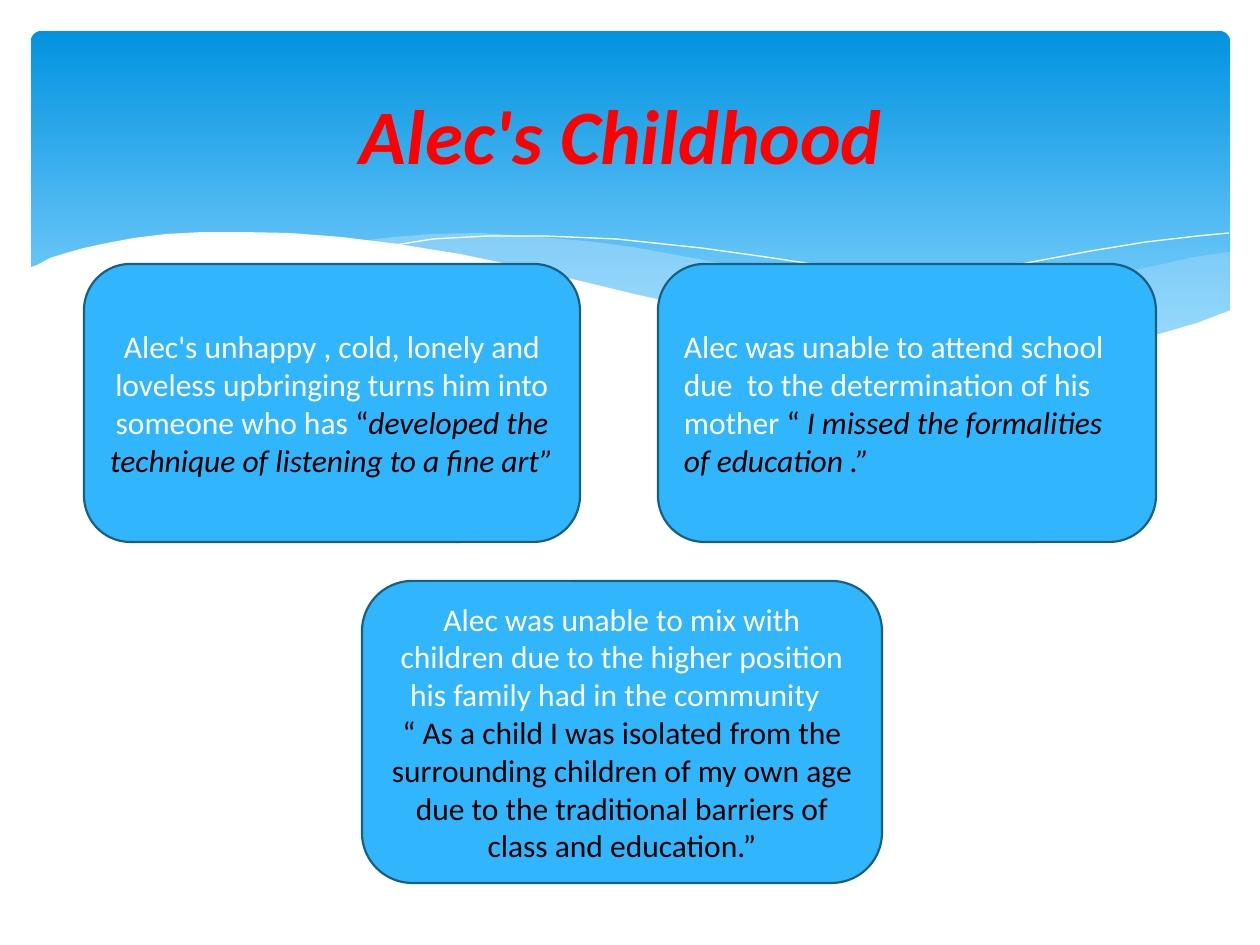
"""Build the slide on Alec's childhood: a wave banner, a title and three cards."""
from lxml.etree import SubElement
from pptx import Presentation
from pptx.dml.color import RGBColor
from pptx.enum.shapes import MSO_SHAPE
from pptx.enum.text import MSO_ANCHOR, PP_ALIGN
from pptx.oxml.ns import qn
from pptx.util import Pt

SCALE = 914400 / 126
WHITE, BLACK, RED = "FFFFFF", "000000", "FF0000"
PALE, CARD, EDGE = "C6E7FC", "31B6FD", "195F84"


def color(hex_text):
    """Turn a hex string into a colour."""
    return RGBColor.from_string(hex_text)


def write(box, align, paragraphs):
    """Fill a box with paragraphs of (text, format) spans."""
    frame = box.text_frame
    frame.word_wrap = True
    frame.vertical_anchor = MSO_ANCHOR.MIDDLE
    for index, spans in enumerate(paragraphs):
        para = frame.add_paragraph() if index else frame.paragraphs[0]
        para.alignment = align
        for text, values in spans:
            span = para.add_run()
            span.text = text
            values = {"name": "Calibri", "size": Pt(18), **values}
            span.font.color.rgb = color(values.pop("color"))
            for key, value in values.items():
                setattr(span.font, key, value)


deck = Presentation()
deck.slide_width, deck.slide_height = round(1260 * SCALE), round(945 * SCALE)
page = deck.slides.add_slide(deck.slide_layouts[6])

banner_place = [round(n * SCALE) for n in (31, 31, 1199, 340)]
banner = page.shapes.add_shape(MSO_SHAPE.ROUNDED_RECTANGLE, *banner_place)
banner.adjustments[0] = 0.03
banner.shadow.inherit = False
banner.line.fill.background()
banner.fill.gradient()
banner.fill.gradient_angle = 270
for stop, position, shade in zip(banner.fill.gradient_stops, (0, 0.9), ("0293E0", "83D3FE")):
    stop.position = position
    stop.color.rgb = color(shade)

right_wave = [
    (1229, 252), (1194, 257), (1159, 265), (1085, 281), (1014, 298), (949, 312), (890, 324),
    (833, 334), (888, 341), (938, 346), (984, 349), (1026, 350), (1064, 349), (1099, 346),
    (1130, 341), (1160, 334), (1187, 326), (1213, 318), (1230, 311), (1230, 252),
]
middle_wave = [
    (1125, 344), (1055, 334), (976, 320), (890, 302), (793, 280), (736, 266), (682, 256),
    (633, 247), (586, 241), (529, 236), (479, 233), (433, 234), (394, 237), (360, 241),
    (431, 251), (509, 264), (566, 277), (619, 292), (713, 312), (799, 329), (876, 340),
    (943, 348), (1003, 350), (1055, 350), (1104, 348),
]
long_crest = [
    (389, 246), (433, 239), (488, 236), (545, 236), (616, 239), (701, 248), (766, 257),
    (838, 268), (916, 285), (1002, 304), (1095, 329), (1143, 343),
]
right_crest = [
    (772, 324), (823, 310), (876, 296), (942, 281), (1016, 265), (1091, 251), (1146, 242),
    (1198, 236), (1229, 233),
]
white_wave = [
    (1231, 310), (1197, 323), (1159, 334), (1118, 341), (1071, 347), (1019, 349), (959, 347),
    (892, 340), (816, 330), (730, 315), (634, 294), (527, 268), (460, 254), (398, 244),
    (341, 237), (290, 233), (243, 232), (203, 232), (166, 234), (134, 238), (107, 243),
    (84, 248), (66, 253), (50, 258), (37, 265), (29, 268), (29, 415), (1231, 415),
]
waves = [
    (right_wave, PALE, 29),
    (middle_wave, PALE, 40),
    (long_crest, None, 100),
    (right_crest, None, 100),
    (white_wave, WHITE, 100),
]
for points, fill, opacity in waves:
    builder = page.shapes.build_freeform(*points[0], scale=SCALE)
    builder.add_line_segments(points[1:], close=fill is not None)
    wave = builder.convert_to_shape()
    wave.shadow.inherit = False
    if fill:
        wave.line.fill.background()
        wave.fill.solid()
        wave.fill.fore_color.rgb = color(fill)
        if opacity < 100:
            tint = wave.fill._xPr.find(qn("a:solidFill"))[0]
            SubElement(tint, qn("a:alpha")).set("val", str(opacity * 1000))
    else:
        wave.fill.background()
        wave.line.color.rgb = color(WHITE)
        wave.line.width = Pt(0)

title = page.shapes.add_textbox(*[round(n * SCALE) for n in (63, 47, 1134, 173)])
title_format = {"size": Pt(44), "color": RED, "bold": True, "italic": True}
write(title, PP_ALIGN.CENTER, [[("Alec's Childhood ", title_format)]])

plain, dark = {"color": WHITE}, {"color": BLACK}
quote = {"color": BLACK, "italic": True}
cards = [
    ((84, 264, 496, 278), PP_ALIGN.CENTER, [[
        ("Alec's unhappy , cold, lonely and loveless upbringing turns him into "
         "someone who has ", plain),
        ("“", dark),
        ("developed the technique of listening to a fine art”", quote),
    ]]),
    ((658, 264, 498, 278), PP_ALIGN.LEFT, [[
        ("Alec was unable to attend school due  to the determination of his mother ", plain),
        ("“ ", dark),
        ("I missed the formalities of education .”", quote),
    ]]),
    ((362, 581, 520, 302), PP_ALIGN.CENTER, [
        [("Alec was unable to mix with children due to the higher position his family "
          "had in the community  ", plain)],
        [("“ As a child I was isolated from the surrounding children of my own age due "
          "to the traditional barriers of class and education.”", dark)],
    ]),
]
for place, align, paragraphs in cards:
    card = page.shapes.add_shape(
        MSO_SHAPE.ROUNDED_RECTANGLE, *[round(n * SCALE) for n in place])
    card.shadow.inherit = False
    card.fill.solid()
    card.fill.fore_color.rgb = color(CARD)
    card.line.color.rgb = color(EDGE)
    card.line.width = Pt(1.25)
    write(card, align, paragraphs)

deck.save("out.pptx")
